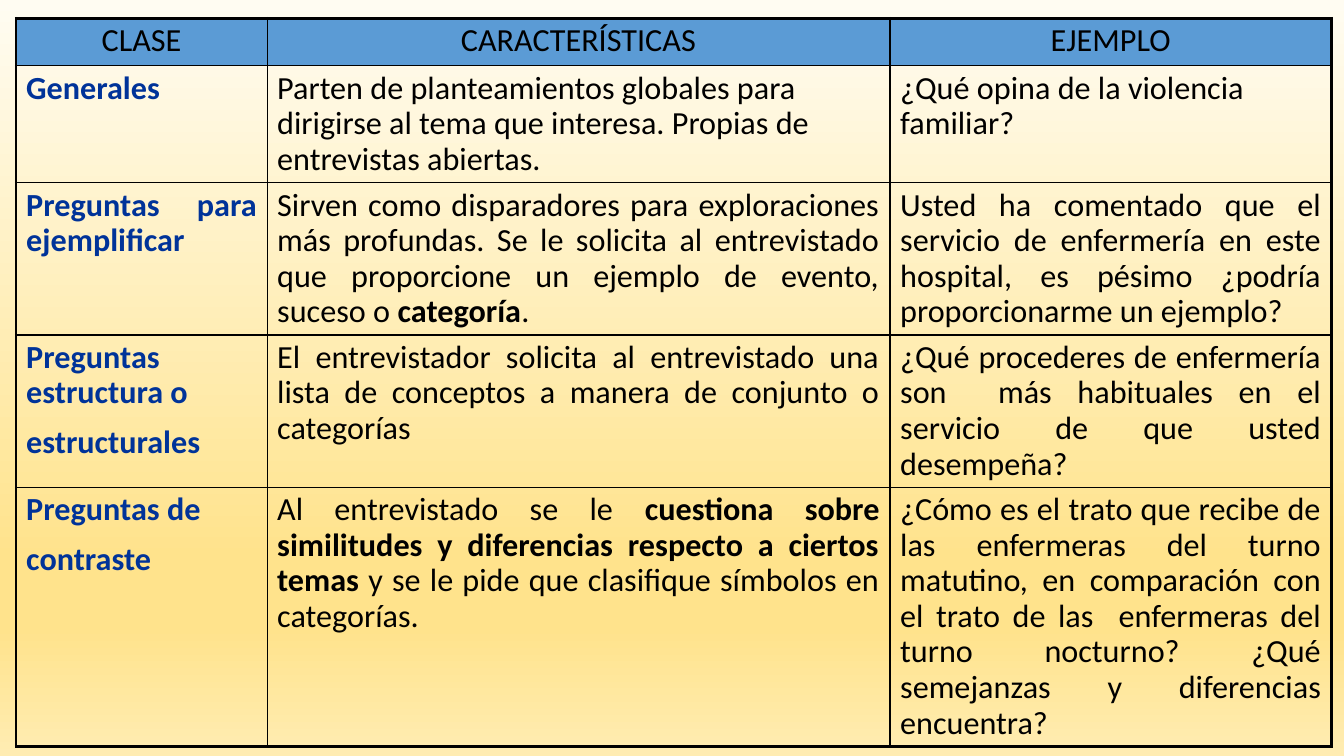
from dataclasses import dataclass

from lxml import etree
from pptx import Presentation
from pptx.dml.color import RGBColor
from pptx.enum.text import PP_ALIGN
from pptx.oxml.ns import qn
from pptx.util import Pt

LEFT, CENTER, JUSTIFY = PP_ALIGN.LEFT, PP_ALIGN.CENTER, PP_ALIGN.JUSTIFY


@dataclass(frozen=True)
class Theme:
    font: str = "Calibri"
    size: float = 23
    text: str = "000000"
    label: str = "003399"
    header: str = "5B9BD5"
    border: str = "000000"
    thin: float = 1
    thick: float = 2.25
    backdrop: tuple = ((0, "FFFCF2"), (74, "FFE38C"), (83, "FFE38C"), (100, "FFECB2"))


# Content: a cell is a list of paragraphs, a paragraph a list of (text, bold) runs
def plain(*lines, bold=False):
    return [[(line, bold)] for line in lines]


HEADERS = ["CLASE", "CARACTERÍSTICAS", "EJEMPLO"]
QUESTIONS = [
    (plain("Generales", bold=True),
     plain("Parten de planteamientos globales para dirigirse al tema que interesa. "
           "Propias de entrevistas abiertas."),
     plain("¿Qué opina de la violencia familiar?")),
    (plain("Preguntas para ejemplificar", bold=True),
     [[("Sirven como disparadores para exploraciones más profundas. Se le solicita al "
        "entrevistado que proporcione un ejemplo de evento, suceso o ", False),
       ("categoría", True), (".", False)]],
     plain("Usted ha comentado que el servicio de enfermería en este hospital, es pésimo "
           "¿podría proporcionarme un ejemplo?")),
    (plain("Preguntas estructura o", "estructurales", bold=True),
     plain("El entrevistador solicita al entrevistado una lista de conceptos a manera de "
           "conjunto o categorías"),
     plain("¿Qué procederes de enfermería son  más habituales en el servicio de que usted "
           "desempeña?")),
    (plain("Preguntas de", "contraste", bold=True),
     [[("Al entrevistado se le ", False),
       ("cuestiona sobre similitudes y diferencias respecto a ciertos temas ", True),
       ("y se le pide que clasifique símbolos en categorías.", False)]],
     plain("¿Cómo es el trato que recibe de las enfermeras del turno matutino, en "
           "comparación con el trato de las  enfermeras del turno nocturno? ¿Qué "
           "semejanzas y diferencias encuentra?")),
]
COL_WIDTHS = [179.3, 445, 315.4]
ROW_HEIGHTS = [34, 81.4, 108, 106.6, 184.3]


def write(tf, paragraphs, *, font, size, color, align=LEFT, spacing=0.9, before=10):
    for i, runs in enumerate(paragraphs):
        p = tf.paragraphs[0] if i == 0 else tf.add_paragraph()
        p.alignment, p.line_spacing, p.space_before = align, spacing, Pt(before)
        for text, bold in runs:
            r = p.add_run()
            r.text = text
            r.font.name, r.font.size, r.font.bold = font, Pt(size), bold
            r.font.color.rgb = RGBColor.from_string(color)


class Deck:
    def __init__(self, theme, width, height):
        self.theme = theme
        self.prs = Presentation()
        self.prs.slide_width, self.prs.slide_height = Pt(width), Pt(height)
        self.s = None

    def add_slide(self):
        self.s = self.prs.slides.add_slide(self.prs.slide_layouts[6])

    def background(self):
        self.s.background.fill.gradient()
        grad = self.s.element.find(".//" + qn("a:gradFill"))
        stops = grad.find(qn("a:gsLst"))
        for old in list(stops):
            stops.remove(old)
        for percent, color in self.theme.backdrop:
            gs = etree.SubElement(stops, qn("a:gs"), pos=str(percent * 1000))
            etree.SubElement(gs, qn("a:srgbClr"), val=color)
        grad.find(qn("a:lin")).set("ang", "5400000")

    def borders(self, cell, **widths):
        tc_pr = cell._tc.get_or_add_tcPr()
        for side in "LRTB":
            ln = etree.SubElement(tc_pr, qn("a:ln" + side), w=str(Pt(widths[side])))
            fill = etree.SubElement(ln, qn("a:solidFill"))
            etree.SubElement(fill, qn("a:srgbClr"), val=self.theme.border)

    def cell(self, cell, paragraphs, *, color, align, fill=None):
        write(cell.text_frame, paragraphs, font=self.theme.font,
              size=self.theme.size, color=color, align=align)
        if fill:
            cell.fill.solid()
            cell.fill.fore_color.rgb = RGBColor.from_string(fill)
        else:
            cell.fill.background()

    def table(self, headers, rows, left, top, col_widths, row_heights):
        th = self.theme
        n_rows, n_cols = len(row_heights), len(col_widths)
        tbl = self.s.shapes.add_table(n_rows, n_cols, Pt(left), Pt(top),
                                      Pt(sum(col_widths)), Pt(sum(row_heights))).table
        tbl.first_row = tbl.horz_banding = False
        for column, width in zip(tbl.columns, col_widths):
            column.width = Pt(width)
        for row, height in zip(tbl.rows, row_heights):
            row.height = Pt(height)

        # Thick outer frame, thin inner grid
        for i in range(n_rows):
            for j in range(n_cols):
                outer = {"L": j == 0, "R": j == n_cols - 1, "T": i == 0, "B": i == n_rows - 1}
                self.borders(tbl.cell(i, j),
                             **{k: th.thick if v else th.thin for k, v in outer.items()})

        # Header row
        for j, header in enumerate(headers):
            self.cell(tbl.cell(0, j), plain(header), color=th.text,
                      align=CENTER, fill=th.header)

        # Body: blue labels in the first column, short first row left-aligned
        for i, row in enumerate(rows, 1):
            for j, paragraphs in enumerate(row):
                self.cell(tbl.cell(i, j), paragraphs,
                          color=th.label if j == 0 else th.text,
                          align=LEFT if i == 1 and j > 0 else JUSTIFY)


def main():
    deck = Deck(Theme(), 960, 540)
    deck.add_slide()
    deck.background()
    deck.table(HEADERS, QUESTIONS, 11.5, 13, COL_WIDTHS, ROW_HEIGHTS)
    deck.prs.save("out.pptx")


if __name__ == "__main__":
    main()
